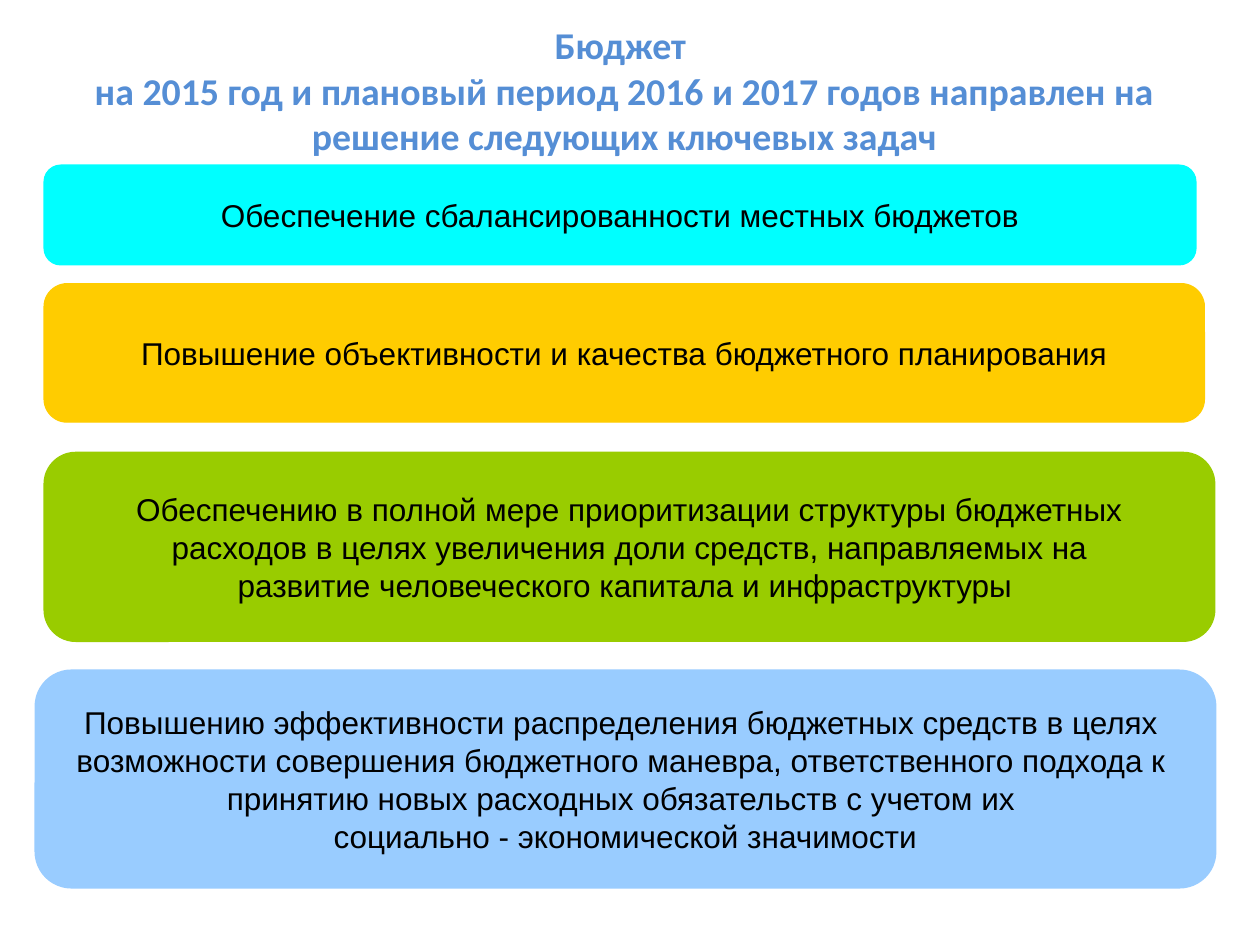
from pptx import Presentation
from pptx import util as u
from pptx.dml.color import RGBColor
from pptx.enum import shapes, text

COLORS = {
    "title": "558ED5",
    "text": "000000",
    "balance": "00FFFF",
    "planning": "FFCC00",
    "priorities": "99CC00",
    "efficiency": "99CCFF",
}

TITLE_LINES = [
    "Бюджет ",
    "на 2015 год и плановый период 2016 и 2017 годов направлен на решение следующих ключевых задач",
]

# colour name, (left, top, width, height) in cm, lines
TASKS = [
    ("balance", (0.89, 3.33, 23.22, 2.01),
     ["Обеспечение сбалансированности местных бюджетов"]),
    ("planning", (0.89, 5.72, 23.39, 2.79),
     ["Повышение объективности и качества бюджетного планирования"]),
    ("priorities", (0.89, 9.12, 23.6, 3.81),
     ["Обеспечению в полной мере приоритизации структуры бюджетных",
      " расходов в целях увеличения доли средств, направляемых на ",
      "развитие человеческого капитала и инфраструктуры "]),
    ("efficiency", (0.71, 13.51, 23.8, 4.39),
     ["Повышению эффективности распределения бюджетных средств в целях ",
      "возможности совершения бюджетного маневра, ответственного подхода к ",
      "принятию новых расходных обязательств с учетом их ",
      "социально - экономической значимости"]),
]


class SlideBuilder:
    """Holds the style and the current slide."""

    title_font, title_size = "Calibri", u.Pt(21.6)
    body_font, body_size = "Arial", u.Pt(18)
    outline = u.Pt(0.75)

    def __init__(self, presentation):
        self.slide = presentation.slides.add_slide(presentation.slide_layouts[5])

    @staticmethod
    def color(name):
        return RGBColor.from_string(COLORS[name])

    def add_run(self, paragraph, content, font, size, color, bold=False):
        run = paragraph.add_run()
        run.text = content
        run.font.name = font
        run.font.size = size
        run.font.bold = bold
        run.font.color.rgb = self.color(color)

    def title(self, box, lines):
        shape = self.slide.shapes.title
        shape.left, shape.top, shape.width, shape.height = map(u.Cm, box)
        frame = shape.text_frame
        frame.auto_size = text.MSO_AUTO_SIZE.NONE
        frame.vertical_anchor = text.MSO_ANCHOR.MIDDLE
        paragraph = frame.paragraphs[0]
        paragraph.alignment = text.PP_ALIGN.CENTER
        for index, line in enumerate(lines):
            if index:
                paragraph.add_line_break()
            self.add_run(paragraph, line, self.title_font, self.title_size, "title", True)

    def task(self, fill, box, lines):
        shape = self.slide.shapes.add_shape(
            shapes.MSO_SHAPE.ROUNDED_RECTANGLE, *map(u.Cm, box))
        shape.shadow.inherit = False
        shape.fill.solid()
        shape.fill.fore_color.rgb = self.color(fill)
        shape.line.color.rgb = self.color(fill)
        shape.line.width = self.outline
        frame = shape.text_frame
        frame.word_wrap = False
        frame.vertical_anchor = text.MSO_ANCHOR.MIDDLE
        for index, line in enumerate(lines):
            paragraph = frame.add_paragraph() if index else frame.paragraphs[0]
            paragraph.alignment = text.PP_ALIGN.CENTER
            self.add_run(paragraph, line, self.body_font, self.body_size, "text")


def main():
    presentation = Presentation()
    presentation.slide_width = u.Cm(25.4)
    presentation.slide_height = u.Cm(19.05)
    builder = SlideBuilder(presentation)
    builder.title((0.69, 0.71, 23.8, 2.21), TITLE_LINES)
    for fill, box, lines in TASKS:
        builder.task(fill, box, lines)
    presentation.save("out.pptx")


if __name__ == "__main__":
    main()
